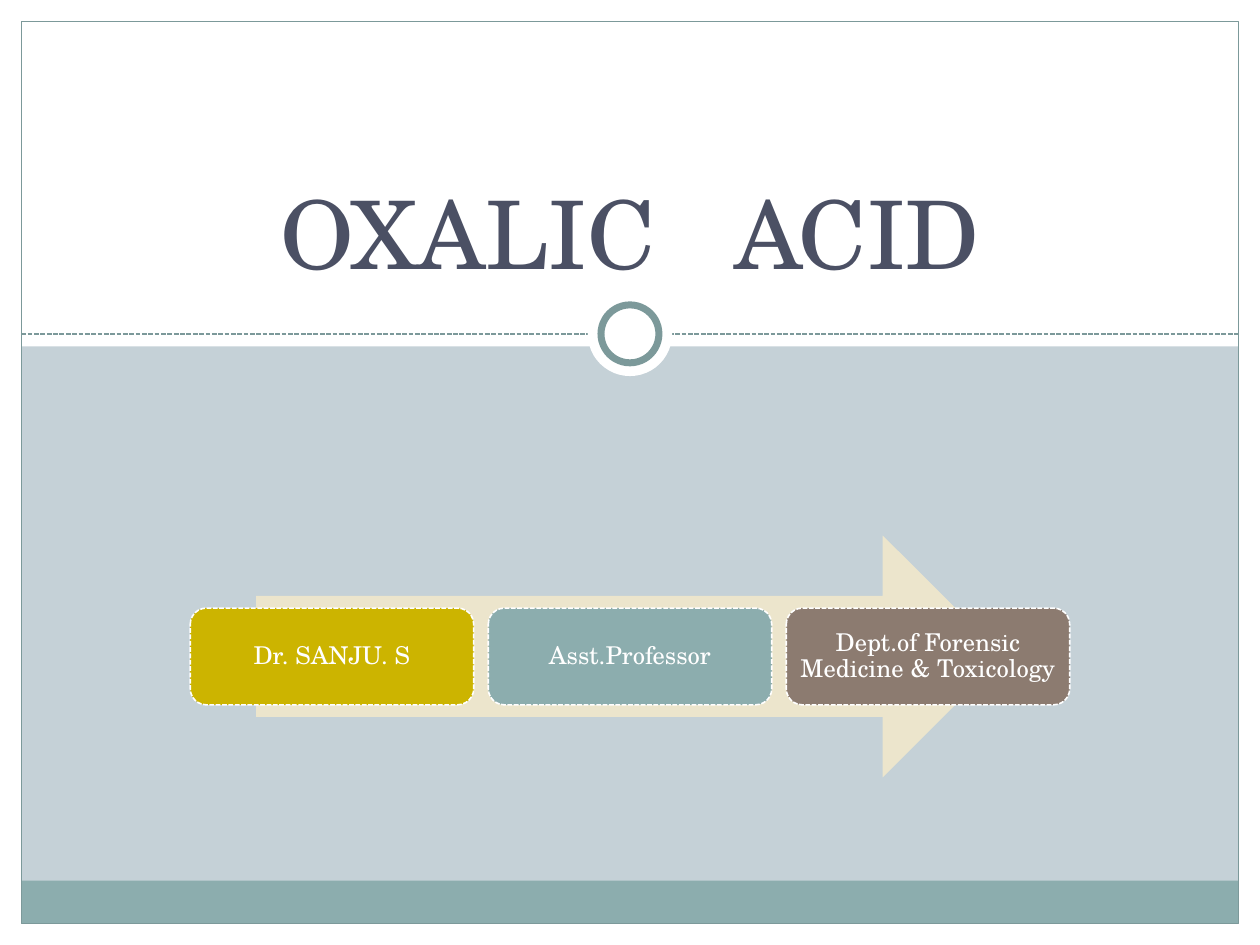
import pptx
import pptx.util
import pptx.dml.color
import pptx.enum.dml
import pptx.enum.shapes
import pptx.enum.text
import pptx.oxml

SHAPE = pptx.enum.shapes.MSO_SHAPE
DASH = pptx.enum.dml.MSO_LINE.SQUARE_DOT
FONT = "TeX Gyre Schola"
W, H = 10, 7.5
MARGIN = 0.17
RULE_Y = 2.65
COLORS = {
    "background": "C5D1D7",
    "white": "FFFFFF",
    "rule": "7C999A",
    "teal": "8CADAE",
    "title": "4B5064",
    "arrow": "ECE5CC",
    "gold": "CCB400",
    "brown": "8C7B70",
}
CARDS = [
    ("Dr. SANJU. S", "gold"),
    ("Asst.Professor", "teal"),
    ("Dept.of Forensic Medicine & Toxicology", "brown"),
]


def rgb(name):
    """Return the named palette colour."""
    return pptx.dml.color.RGBColor.from_string(COLORS[name])


def style_line(line, color, width, dash=None):
    """Set the colour, width and optional dash of a line."""
    line.color.rgb = rgb(color)
    line.width = pptx.util.Pt(width)
    if dash is not None:
        line.dash_style = dash


def add_box(s, kind, box, fill=None, line=None, width=0.75, dash=None):
    """Add a flat preset shape in a box given in inches."""
    sp = s.shapes.add_shape(kind, *map(pptx.util.Inches, box))
    sp.shadow.inherit = False
    if fill:
        sp.fill.solid()
        sp.fill.fore_color.rgb = rgb(fill)
    else:
        sp.fill.background()
    if line:
        style_line(sp.line, line, width, dash)
    else:
        sp.line.fill.background()
    return sp


def style_paragraph(p, size, color):
    """Centre a paragraph and set its font."""
    p.alignment = pptx.enum.text.PP_ALIGN.CENTER
    p.font.size = pptx.util.Pt(size)
    p.font.name = FONT
    p.font.color.rgb = rgb(color)


def add_frame(s, box):
    """Draw the white margins, header, footer band and border."""
    x, y, w, h = box
    inner = (x + MARGIN, y + MARGIN, w - 2 * MARGIN, h - 2 * MARGIN)
    band = 0.34
    for edge in [
        (x, y + h - MARGIN, w, MARGIN),
        (x + w - MARGIN, y, MARGIN, h),
        (x, y, MARGIN, h),
        (x, y, w, RULE_Y + 0.1),
    ]:
        add_box(s, SHAPE.RECTANGLE, edge, "white")
    add_box(s, SHAPE.RECTANGLE,
            (inner[0], y + h - MARGIN - band, inner[2], band), "teal")
    add_rule(s, inner[0], inner[0] + inner[2], y + RULE_Y)
    add_box(s, SHAPE.RECTANGLE, inner, line="rule")
    add_ring(s, x + w / 2, y + RULE_Y)


def add_rule(s, left, right, y):
    """Draw the dashed rule below the title."""
    ends = map(pptx.util.Inches, (left, y, right, y))
    rule = s.shapes.add_connector(pptx.enum.shapes.MSO_CONNECTOR.STRAIGHT, *ends)
    style_line(rule.line, "rule", 0.9, DASH)
    rule._element.spPr.append(pptx.oxml.parse_xml(
        '<a:effectLst xmlns:a="http://schemas.openxmlformats.org/drawingml/2006/main"/>'))


def add_ring(s, cx, cy):
    """Draw the ring and its white halo around a centre."""
    for size, line in ((0.67, None), (0.46, "rule")):
        add_box(s, SHAPE.OVAL, (cx - size / 2, cy - size / 2, size, size),
                "white", line, 4)


def place_title(s, box):
    """Place the title in front of the frame, with a wide word gap."""
    title = s.shapes.title
    s.shapes._spTree.append(title._element)
    title.left, title.top, title.width, title.height = map(pptx.util.Inches, box)
    tf = title.text_frame
    tf.word_wrap = True
    tf.auto_size = pptx.enum.text.MSO_AUTO_SIZE.NONE
    tf.vertical_anchor = pptx.enum.text.MSO_ANCHOR.BOTTOM
    p = tf.paragraphs[0]
    for text in ("OXALIC", " ", "ACID"):
        r = p.add_run()
        r.text = text
        if text == " ":
            r._r.get_or_add_rPr().set("spc", "3000")
    style_paragraph(p, 54, "title")


def add_process(s, box):
    """Draw the arrow with the presenter cards evenly spaced over it."""
    x, y, w, h = box
    arrow_w = 0.85 * w
    add_box(s, SHAPE.RIGHT_ARROW, (x + (w - arrow_w) / 2, y, arrow_w, h), "arrow")
    card_w, card_h = 2.25, 0.4 * h
    step = (w - card_w) / (len(CARDS) - 1)
    for i, (text, fill) in enumerate(CARDS):
        card = add_box(s, SHAPE.ROUNDED_RECTANGLE,
                       (x + i * step, y + (h - card_h) / 2, card_w, card_h),
                       fill, "white", 0.9, DASH)
        tf = card.text_frame
        tf.word_wrap = True
        tf.vertical_anchor = pptx.enum.text.MSO_ANCHOR.MIDDLE
        tf.margin_left = tf.margin_right = pptx.util.Inches(0.06)
        p = tf.paragraphs[0]
        p.text = text
        p.line_spacing = 0.9
        style_paragraph(p, 14, "white")


def main():
    """Build and save the title slide."""
    prs = pptx.Presentation()
    prs.slide_width, prs.slide_height = pptx.util.Inches(W), pptx.util.Inches(H)
    s = prs.slides.add_slide(prs.slide_layouts.get_by_name("Title Only"))
    s.background.fill.solid()
    s.background.fill.fore_color.rgb = rgb("background")
    add_frame(s, (0, 0, W, H))
    place_title(s, (0.075 * W, 0.42, 0.85 * W, 1.92))
    add_process(s, (1.51, 4.25, 6.98, 1.92))
    prs.save("out.pptx")


if __name__ == "__main__":
    main()
